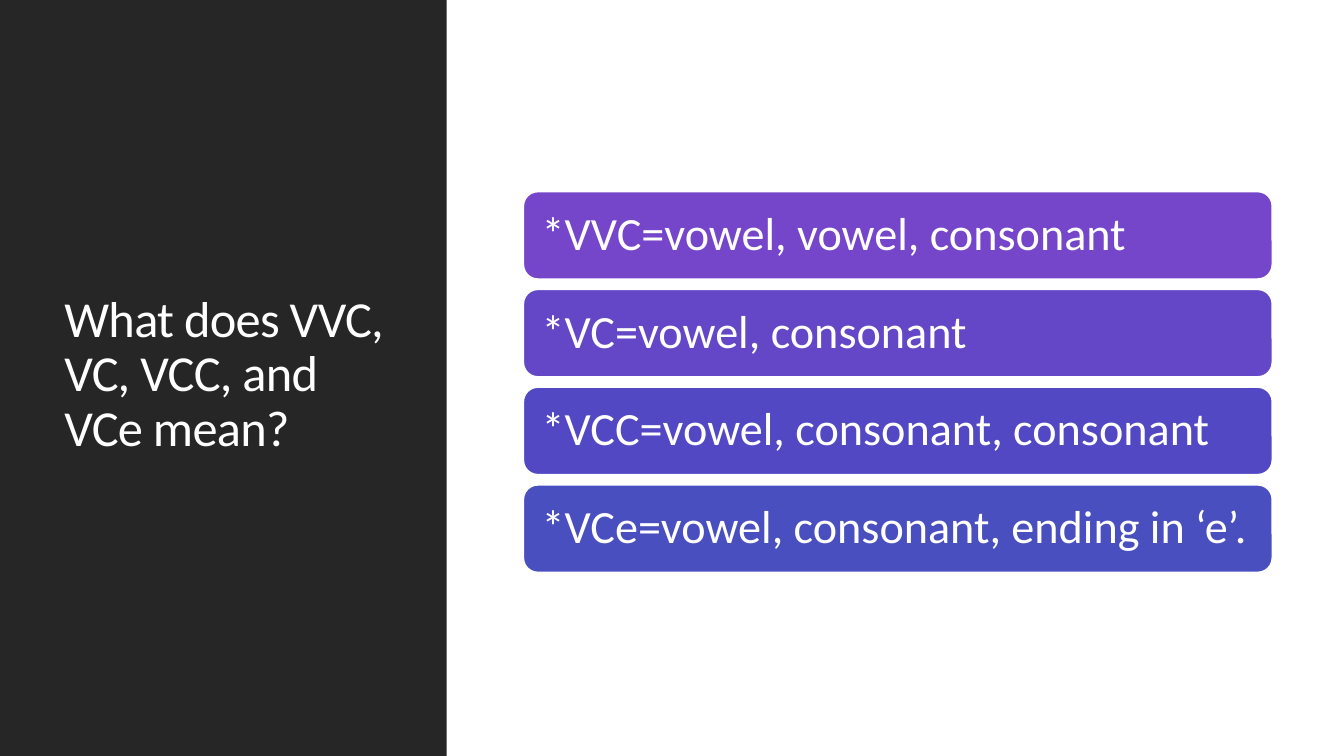
from pptx import Presentation
from pptx.dml.color import RGBColor
from pptx.enum.shapes import MSO_SHAPE
from pptx.enum.text import MSO_ANCHOR, PP_ALIGN
from pptx.util import Inches, Pt

DARK = RGBColor(0x26, 0x26, 0x26)
WHITE = RGBColor(0xFF, 0xFF, 0xFF)
PATTERNS = [
    ("*VVC=vowel, vowel, consonant", RGBColor(0x76, 0x46, 0xCA)),
    ("*VC=vowel, consonant", RGBColor(0x64, 0x47, 0xC6)),
    ("*VCC=vowel, consonant, consonant", RGBColor(0x53, 0x48, 0xC3)),
    ("*VCe=vowel, consonant, ending in ‘e’.", RGBColor(0x49, 0x4F, 0xBF)),
]


def write(shape, text, size, inset):
    """Put one left-aligned white paragraph in the middle of a shape."""
    tf = shape.text_frame
    frame = {"word_wrap": True, "vertical_anchor": MSO_ANCHOR.MIDDLE,
             "margin_left": Inches(inset), "margin_right": Inches(inset),
             "margin_top": 0, "margin_bottom": 0}
    for name, value in frame.items():
        setattr(tf, name, value)
    p = tf.paragraphs[0]
    p.alignment = PP_ALIGN.LEFT
    p.line_spacing = 0.9
    r = p.add_run()
    r.text = text
    for name, value in {"name": "Calibri", "size": Pt(size)}.items():
        setattr(r.font, name, value)
    r.font.color.rgb = WHITE
    return r


def add_block(s, kind, left, top, width, height, fill):
    sp = s.shapes.add_shape(kind, Inches(left), Inches(top),
                            Inches(width), Inches(height))
    sp.shadow.inherit = False
    sp.fill.solid()
    sp.fill.fore_color.rgb = fill
    sp.line.fill.background()
    return sp


def add_title_panel(s, left, top, width, height):
    add_block(s, MSO_SHAPE.RECTANGLE, left, top, width, height, DARK)
    title = s.shapes.add_textbox(Inches(left + 0.54), Inches(top + 0.57),
                                 Inches(width - 1.06), Inches(height - 1.19))
    r = write(title, "What does VVC, VC, VCC, and VCe mean?", 36, 0.1)
    # Slightly tightened letter spacing
    r.font._element.set("spc", "-50")


def add_pattern_list(s, left, top, width, height, gap=0.1):
    bar = (height - gap * (len(PATTERNS) - 1)) / len(PATTERNS)
    for i, (text, fill) in enumerate(PATTERNS):
        sp = add_block(s, MSO_SHAPE.ROUNDED_RECTANGLE, left,
                       top + i * (bar + gap), width, bar, fill)
        sp.line.color.rgb = WHITE
        sp.line.width = Pt(1.25)
        # The rounded corners add a little inset of their own
        write(sp, text, 33, 0.14)


def main():
    prs = Presentation()
    prs.slide_width, prs.slide_height = Inches(13.33), Inches(7.5)
    s = prs.slides.add_slide(prs.slide_layouts[6])
    s.background.fill.solid()
    s.background.fill.fore_color.rgb = WHITE
    add_title_panel(s, 0, 0, 4.43, 7.5)
    add_pattern_list(s, 5.19, 1.9, 7.43, 3.78)
    prs.save("out.pptx")


if __name__ == "__main__":
    main()
